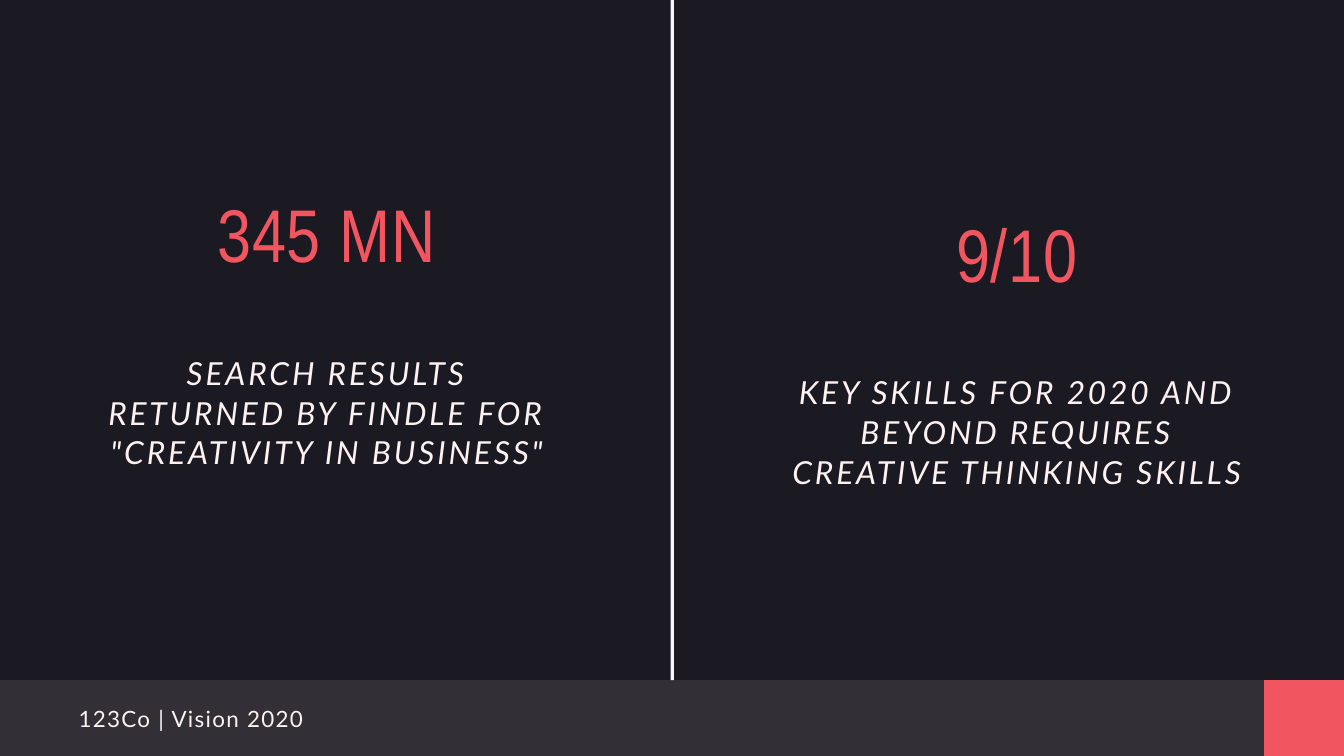
from lxml import etree
from pptx import Presentation, util as u
from pptx.dml.color import RGBColor
from pptx.enum import shapes, text
from pptx.oxml.ns import qn

HUES = {"night": "1B1922", "cream": "FDF2F1", "coral": "F15560"}
WIDE, HIGH = 20, 11.25
FOOT = 10.12

STATS = [
    (1.12, 3.02, "345 MN",
     'SEARCH RESULTS RETURNED BY FINDLE FOR "CREATIVITY IN BUSINESS"'),
    (11.39, 3.31, "9/10",
     "KEY SKILLS FOR 2020 AND BEYOND REQUIRES CREATIVE THINKING SKILLS"),
]
BRAND = "123Co | Vision 2020"

BARS = [
    ((9.98, 0, 0.05, FOOT), "cream", 100),
    ((0, FOOT, WIDE, HIGH - FOOT), "cream", 10),
    ((18.81, FOOT, WIDE - 18.81, HIGH - FOOT), "coral", 100),
]

STYLES = {
    "stat": {"font": {"name": "Arial Narrow", "size": u.Pt(80)},
             "hue": "coral", "gap": 80, "lead": 80, "align": "CENTER"},
    "claim": {"font": {"name": "Lato", "size": u.Pt(34), "italic": True},
              "hue": "cream", "gap": 310, "lead": 42.5, "align": "CENTER"},
    "brand": {"font": {"name": "Lato", "size": u.Pt(24)},
              "hue": "cream", "gap": 140, "lead": 33.6, "align": "LEFT"},
}


def color(name):
    return RGBColor.from_string(HUES[name])


def add_bar(slide, box, hue, alpha):
    bar = slide.shapes.add_shape(shapes.MSO_SHAPE.RECTANGLE, *map(u.Inches, box))
    bar.shadow.inherit = False
    bar.line.fill.background()
    bar.fill.solid()
    bar.fill.fore_color.rgb = color(hue)
    if alpha < 100:
        tint = bar.fill._xPr.find(".//" + qn("a:srgbClr"))
        etree.SubElement(tint, qn("a:alpha")).set("val", str(alpha * 1000))


def add_text(slide, box, words, style):
    look = STYLES[style]
    frame = slide.shapes.add_textbox(*map(u.Inches, box)).text_frame
    frame.word_wrap = True
    for side in ("left", "top", "right", "bottom"):
        setattr(frame, "margin_" + side, 0)
    para = frame.paragraphs[0]
    para.alignment = getattr(text.PP_ALIGN, look["align"])
    para.line_spacing = u.Pt(look["lead"])
    run = para.add_run()
    run.text = words
    for key, value in look["font"].items():
        setattr(run.font, key, value)
    run.font.color.rgb = color(look["hue"])
    run._r.get_or_add_rPr().set("spc", str(look["gap"]))


def main():
    deck = Presentation()
    deck.slide_width, deck.slide_height = u.Inches(WIDE), u.Inches(HIGH)
    slide = deck.slides.add_slide(deck.slide_layouts[6])
    slide.background.fill.solid()
    slide.background.fill.fore_color.rgb = color("night")
    for bar in BARS:
        add_bar(slide, *bar)
    for left, top, stat, claim in STATS:
        add_text(slide, (left, top, 7.48, 1.2), stat, "stat")
        add_text(slide, (left + 0.32, top + 2.22, 6.85, 1.74), claim, "claim")
    add_text(slide, (1.17, 10.43, 15.54, 0.44), BRAND, "brand")
    deck.save("out.pptx")


if __name__ == "__main__":
    main()
